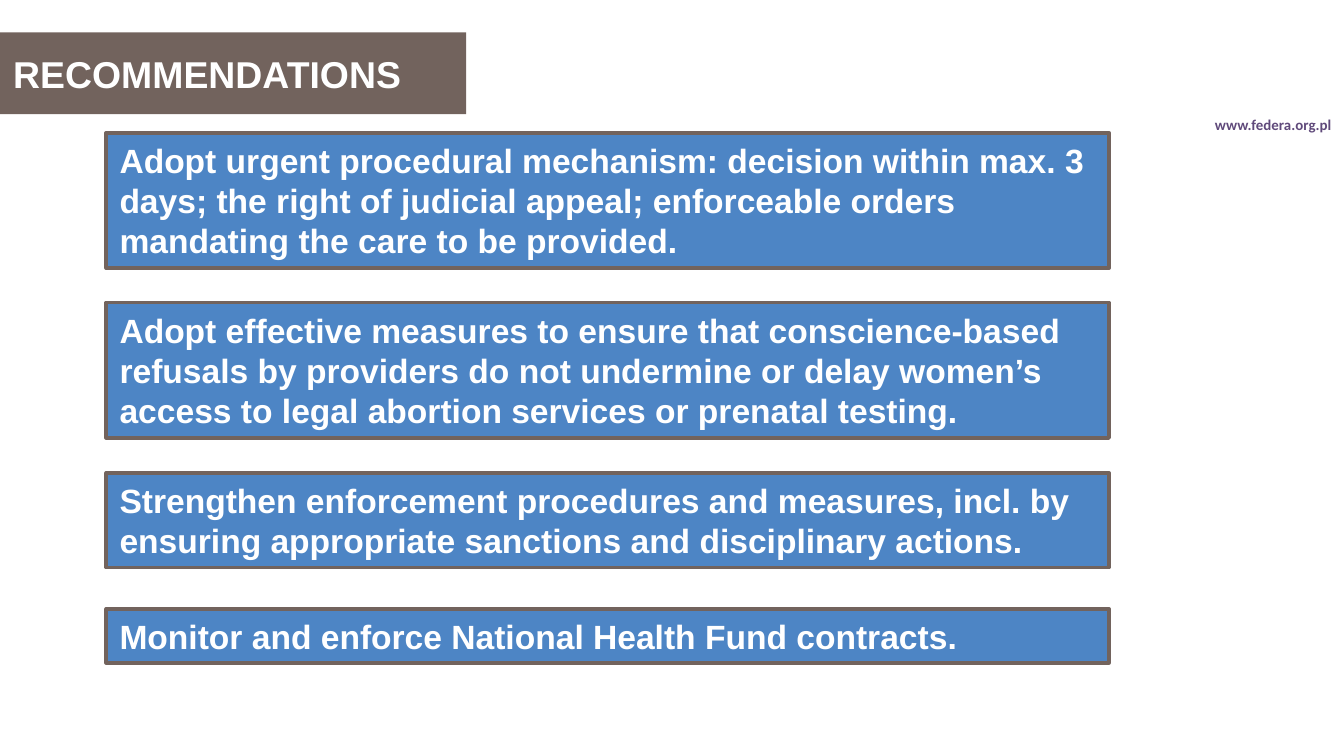
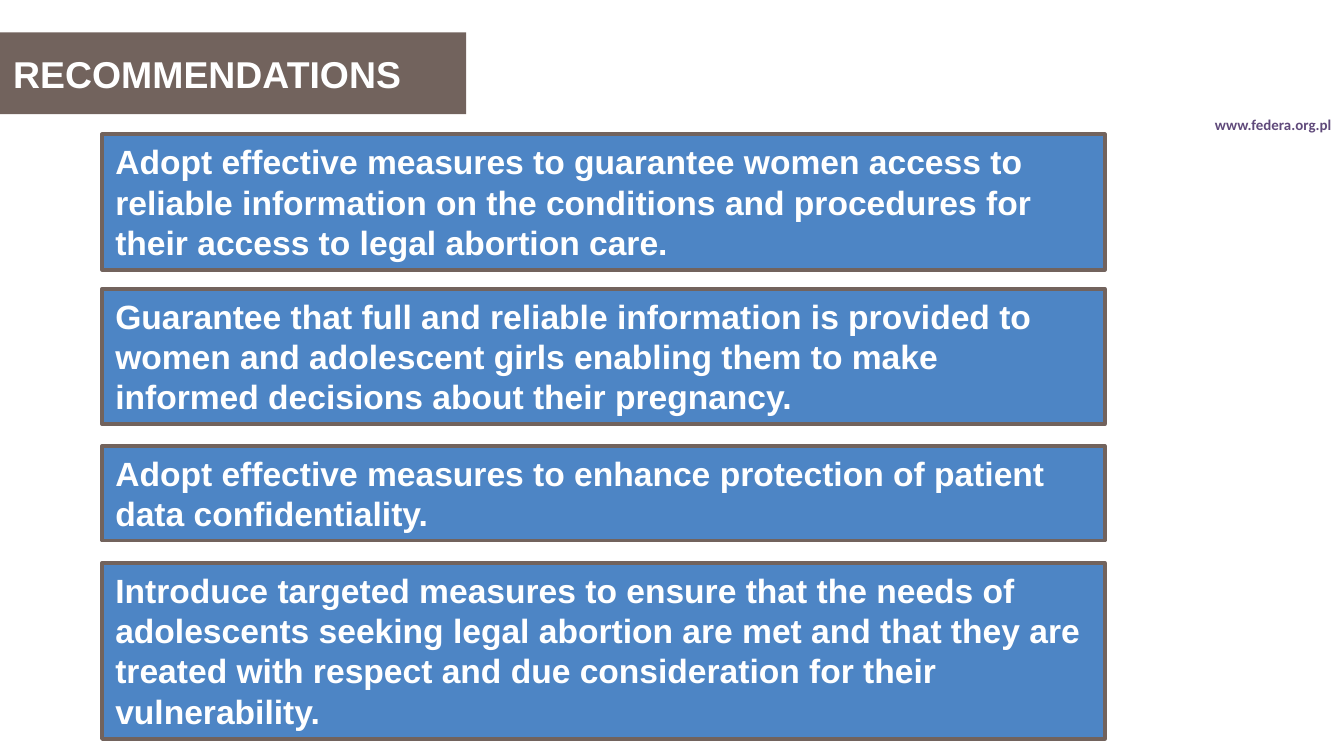
from dataclasses import dataclass

from pptx import Presentation
from pptx.dml.color import RGBColor
from pptx.enum.shapes import MSO_SHAPE
from pptx.enum.text import MSO_ANCHOR, MSO_AUTO_SIZE, PP_ALIGN
from pptx.util import Cm, Pt

RECTANGLE = MSO_SHAPE.RECTANGLE
TOP, MIDDLE = MSO_ANCHOR.TOP, MSO_ANCHOR.MIDDLE
NO_AUTOFIT = MSO_AUTO_SIZE.NONE
LEFT = PP_ALIGN.LEFT
TITLE_ONLY = 5


@dataclass(frozen=True)
class Theme:
    brown: RGBColor = RGBColor(0x72, 0x63, 0x5D)
    blue: RGBColor = RGBColor(0x4D, 0x85, 0xC5)
    purple: RGBColor = RGBColor(0x60, 0x4A, 0x7B)
    white: RGBColor = RGBColor(0xFF, 0xFF, 0xFF)
    heading_font: str = "Arial"
    address_font: str = "Calibri"
    title_size: int = 20
    body_size: int = 18
    address_size: int = 8


THEME = Theme()

# Lengths in centimetres
PAGE_SIZE = (25.4, 14.29)
TITLE_BOX = (0, 0.61, 8.81, 1.55)
ADDRESS_BOX = (22.71, 2.06, 2.77, 0.6)
CARD_WIDTH = 18.95
LINE_HEIGHT = 0.77
CARD_PADDING = 0.25

# Each slide: left edge of its cards, then (top, lines of text, wording)
SLIDES = [
    (2.01, [
        (2.51, 3, "Adopt urgent procedural mechanism: decision within max. 3 days; "
                  "the right of judicial appeal; enforceable orders mandating the "
                  "care to be provided."),
        (5.72, 3, "Adopt effective measures to ensure that conscience-based refusals "
                  "by providers do not undermine or delay women’s access to legal "
                  "abortion services or prenatal testing."),
        (8.94, 2, "Strengthen enforcement procedures and measures, incl. by ensuring "
                  "appropriate sanctions and disciplinary actions."),
        (11.51, 1, "Monitor and enforce National Health Fund contracts."),
    ]),
    (1.93, [
        (2.54, 3, "Adopt effective measures to guarantee women access to reliable "
                  "information on the conditions and procedures for their access to "
                  "legal abortion care."),
        (5.46, 3, "Guarantee that full and reliable information is provided to women "
                  "and adolescent girls enabling them to make informed decisions about "
                  "their pregnancy."),
        (8.43, 2, "Adopt effective measures to enhance protection of patient data "
                  "confidentiality."),
        (10.64, 4, "Introduce targeted measures to ensure that the needs of adolescents "
                   "seeking legal abortion are met and that they are treated with "
                   "respect and due consideration for their vulnerability."),
    ]),
]


def write_text(shape, text, font_name, size, color, anchor=TOP, wrap=True):
    frame = shape.text_frame
    frame.auto_size = NO_AUTOFIT
    frame.word_wrap = wrap
    frame.vertical_anchor = anchor
    frame.margin_left = frame.margin_right = Cm(0.25)
    frame.margin_top = frame.margin_bottom = Cm(0.13)
    paragraph = frame.paragraphs[0]
    paragraph.text = text
    paragraph.alignment = LEFT
    font = paragraph.font
    font.name, font.size, font.bold = font_name, Pt(size), True
    font.color.rgb = color


def fill_title(page, box, text):
    title = page.shapes.title
    title.left, title.top, title.width, title.height = map(Cm, box)
    title.fill.solid()
    title.fill.fore_color.rgb = THEME.brown
    write_text(title, text, THEME.heading_font, THEME.title_size, THEME.white, MIDDLE)


def add_address(page, box):
    address = page.shapes.add_textbox(*map(Cm, box))
    write_text(address, "www.federa.org.pl", THEME.address_font,
               THEME.address_size, THEME.purple, wrap=False)


def add_card(page, box, text):
    card = page.shapes.add_shape(RECTANGLE, *map(Cm, box))
    card.shadow.inherit = False
    card.fill.solid()
    card.fill.fore_color.rgb = THEME.blue
    card.line.color.rgb = THEME.brown
    card.line.width = Pt(2)
    write_text(card, text, THEME.heading_font, THEME.body_size, THEME.white)


def add_recommendations(deck, left, cards):
    page = deck.slides.add_slide(deck.slide_layouts[TITLE_ONLY])
    fill_title(page, TITLE_BOX, "RECOMMENDATIONS")
    for top, lines, text in cards:
        height = CARD_PADDING + lines * LINE_HEIGHT
        add_card(page, (left, top, CARD_WIDTH, height), text)
    add_address(page, ADDRESS_BOX)


def main():
    deck = Presentation()
    deck.slide_width, deck.slide_height = map(Cm, PAGE_SIZE)
    for left, cards in SLIDES:
        add_recommendations(deck, left, cards)
    deck.save("out.pptx")


if __name__ == "__main__":
    main()
